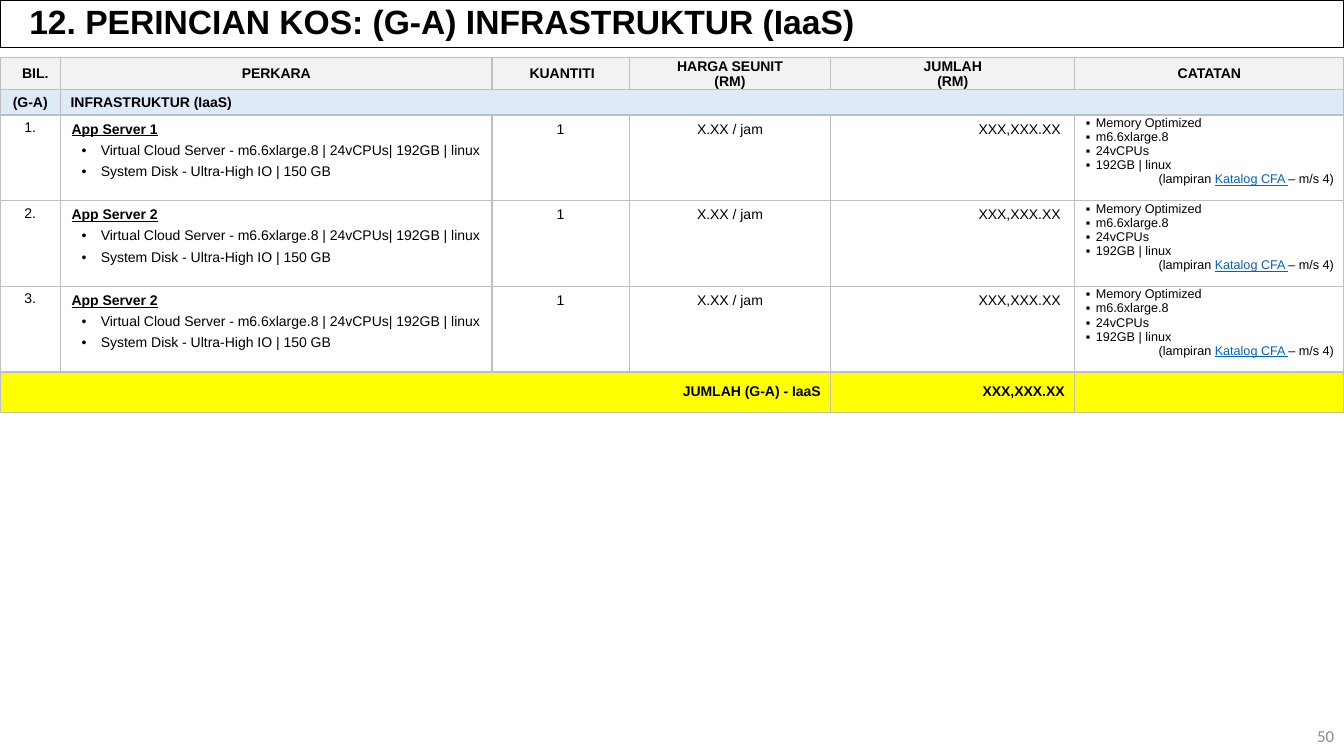
import pptx
import pptx.util
import pptx.dml.color
import pptx.enum.text
import pptx.enum.shapes
import pptx.oxml.ns
from lxml import etree

RGB = pptx.dml.color.RGBColor
Inches, Pt = pptx.util.Inches, pptx.util.Pt
ALIGN = pptx.enum.text.PP_ALIGN
ANCHOR = pptx.enum.text.MSO_ANCHOR
qn = pptx.oxml.ns.qn

BLACK = RGB(0x00, 0x00, 0x00)
WHITE = RGB(0xFF, 0xFF, 0xFF)
HEADER = RGB(0xF2, 0xF2, 0xF2)
SECTION = RGB(0xDE, 0xEB, 0xF7)
TOTAL = RGB(0xFF, 0xFF, 0x00)
GRID = RGB(0xBF, 0xBF, 0xBF)
LINK = RGB(0x05, 0x63, 0xC1)
PAGE = RGB(0x8C, 0x8C, 0x8C)

# Content
TITLE = "12. PERINCIAN KOS: (G-A) INFRASTRUKTUR (IaaS)"
HEADS = [["BIL."], ["PERKARA"], ["KUANTITI"], ["HARGA SEUNIT", "(RM)"],
         ["JUMLAH", "(RM)"], ["CATATAN"]]
HEAD_INDENTS = [0.1, 0, 0.03, 0, 0, 0]
SECTION_CODE, SECTION_NAME = "(G-A)", "INFRASTRUKTUR (IaaS)"
SERVERS = ["App Server 1", "App Server 2", "App Server 2"]
SPECS = ["Virtual Cloud Server - m6.6xlarge.8 | 24vCPUs| 192GB | linux",
         "System Disk - Ultra-High IO | 150 GB"]
QUANTITY, PRICE, AMOUNT = "1", "X.XX / jam", "XXX,XXX.XX"
NOTES = ["Memory Optimized", "m6.6xlarge.8", "24vCPUs", "192GB | linux"]
REFERENCE = [("(lampiran ", {}), ("Katalog CFA ", {"color": LINK, "underline": True}),
             ("– m/s 4)", {})]
TOTAL_LABEL = "JUMLAH (G-A) - IaaS"
PAGE_NUMBER = "50"

WIDTH, HEIGHT = 13.33, 7.5
COLS = [0.6, 4.28, 1.36, 2, 2.42, 2.67]
ROWS = [0.32, 0.25] + [0.85] * len(SERVERS) + [0.4]
TIGHT = (0.01, 0.01, 0.01, 0)
PADDED = (0.1, 0.05, 0.1, 0.05)
SHALLOW = (0.1, 0.04, 0.1, 0.04)


def write(tf, text, size=10, font="Arial", color=BLACK, bold=False, underline=False,
          align=ALIGN.LEFT, left=0, hang=0, bullet=None, spacing=None):
    """Add one paragraph; text is a string or a list of (string, run format)."""
    p = tf.paragraphs[0]
    if p.runs:
        p = tf.add_paragraph()
    pPr = p._p.get_or_add_pPr()
    pPr.set("marL", str(Inches(left)))
    pPr.set("indent", str(Inches(-hang)))
    if bullet:
        etree.SubElement(pPr, qn("a:buFont")).set("typeface", "Arial")
        etree.SubElement(pPr, qn("a:buChar")).set("char", bullet)
    else:
        etree.SubElement(pPr, qn("a:buNone"))
    p.alignment = align
    p.space_before = Pt(0)
    if spacing:
        p.line_spacing = spacing
    for words, look in [(text, {})] if isinstance(text, str) else text:
        r = p.add_run()
        r.text = words
        r.font.name, r.font.size, r.font.bold = font, Pt(size), bold
        r.font.underline = look.get("underline", underline)
        r.font.color.rgb = look.get("color", color)


def set_insets(box, insets):
    (box.margin_left, box.margin_top,
     box.margin_right, box.margin_bottom) = [Inches(v) for v in insets]


def draw_borders(cell, sides):
    tcPr = cell._tc.get_or_add_tcPr()
    for i, side in enumerate("LRTB"):
        ln = etree.Element(qn("a:ln" + side), w=str(Pt(1)))
        if side in sides:
            fill = etree.SubElement(ln, qn("a:solidFill"))
            etree.SubElement(fill, qn("a:srgbClr")).set("val", str(GRID))
        else:
            etree.SubElement(ln, qn("a:noFill"))
        tcPr.insert(i, ln)


def prepare(row, col, insets=PADDED, middle=False):
    cell = table.cell(row, col)
    set_insets(cell, insets)
    cell.vertical_anchor = ANCHOR.MIDDLE if middle else ANCHOR.TOP
    return cell.text_frame


prs = pptx.Presentation()
prs.slide_width, prs.slide_height = Inches(WIDTH), Inches(HEIGHT)
s = prs.slides.add_slide(prs.slide_layouts[5])

# Title bar
title = s.shapes.title
title.left, title.top, title.width, title.height = 0, 0, Inches(WIDTH), Inches(0.47)
title.line.color.rgb, title.line.width = BLACK, Pt(0.75)
tf = title.text_frame
tf.auto_size = pptx.enum.text.MSO_AUTO_SIZE.NONE
tf.vertical_anchor, tf.word_wrap = ANCHOR.MIDDLE, True
set_insets(tf, PADDED)
write(tf, TITLE, size=24, bold=True, left=0.19, spacing=0.9)

# Table grid, fills and borders
table = s.shapes.add_table(len(ROWS), len(COLS), 0, Inches(0.57),
                           Inches(WIDTH), Inches(sum(ROWS))).table
table.first_row = table.horz_banding = False
for i, width in enumerate(COLS):
    table.columns[i].width = Inches(width)
last = len(ROWS) - 1
fills = {0: HEADER, 1: SECTION, last: TOTAL}
for i, height in enumerate(ROWS):
    table.rows[i].height = Inches(height)
    for j in range(len(COLS)):
        cell = table.cell(i, j)
        set_insets(cell, SHALLOW)
        cell.fill.solid()
        cell.fill.fore_color.rgb = fills.get(i, WHITE)
        sides = "LRTB"
        if i == 1 and j > 0:
            sides = {1: "LTB", 5: "RTB"}.get(j, "TB")
        draw_borders(cell, sides)
        end = etree.SubElement(cell.text_frame.paragraphs[0]._p, qn("a:endParaRPr"))
        end.set("sz", "1000")
table.cell(1, 1).merge(table.cell(1, 4))
table.cell(last, 0).merge(table.cell(last, 3))

# Header and section rows
for j, (lines, indent) in enumerate(zip(HEADS, HEAD_INDENTS)):
    tf = prepare(0, j, TIGHT if j > 2 else (0, 0, 0, 0), middle=True)
    for line in lines:
        write(tf, line, bold=True, align=ALIGN.CENTER, left=indent)
write(prepare(1, 0, SHALLOW, middle=True), SECTION_CODE, bold=True, align=ALIGN.CENTER)
write(prepare(1, 1, SHALLOW, middle=True), SECTION_NAME, bold=True)

# Server rows
LEADING = Pt(15.1)
for n, server in enumerate(SERVERS, 1):
    row = n + 1
    write(prepare(row, 0), f"{n}.", align=ALIGN.CENTER)
    tf = prepare(row, 1, TIGHT)
    write(tf, server, bold=True, underline=True, left=0.1, spacing=LEADING)
    for item in SPECS:
        write(tf, item, left=0.39, hang=0.19, bullet="•", spacing=LEADING)
    for col, value in ((2, QUANTITY), (3, PRICE)):
        write(prepare(row, col, TIGHT), value, align=ALIGN.CENTER, spacing=LEADING)
    write(prepare(row, 4, (0.01, 0.01, 0.14, 0)), AMOUNT, align=ALIGN.RIGHT, spacing=LEADING)
    tf = prepare(row, 5, (0.01, 0.01, 0.1, 0))
    for note in NOTES:
        write(tf, note, size=9, left=0.2, hang=0.1, bullet="▪")
    write(tf, REFERENCE, size=9, left=0.1, align=ALIGN.RIGHT)

# Total row
for col, value in ((0, TOTAL_LABEL), (4, AMOUNT)):
    write(prepare(last, col, middle=True), value, bold=True, align=ALIGN.RIGHT)

# Page number
tf = s.shapes.add_textbox(Inches(WIDTH - 3), Inches(HEIGHT - 0.4),
                          Inches(3), Inches(0.4)).text_frame
tf.word_wrap, tf.vertical_anchor = True, ANCHOR.MIDDLE
write(tf, PAGE_NUMBER, size=12, font="Calibri", color=PAGE, align=ALIGN.RIGHT)

prs.save("out.pptx")
